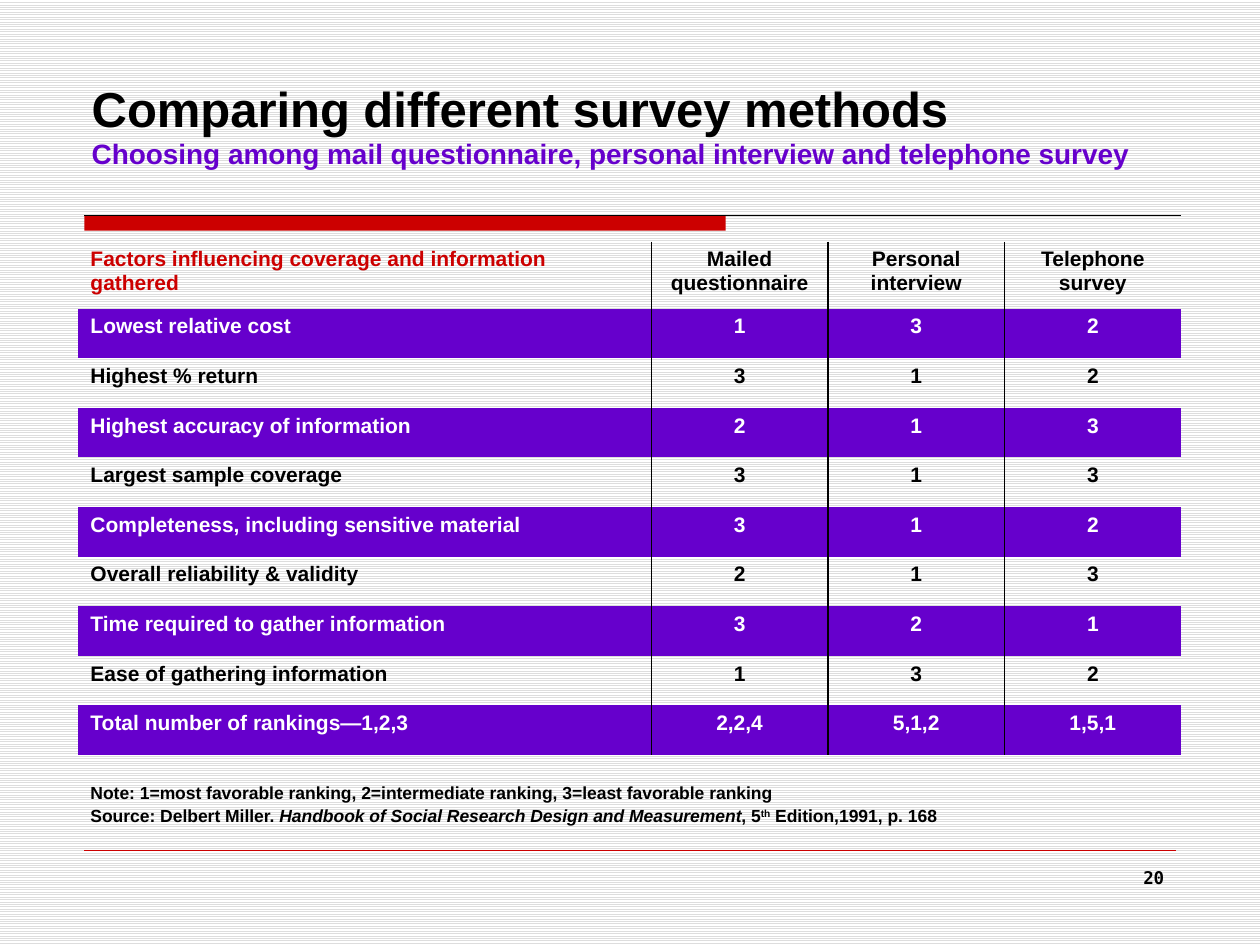
from lxml.etree import SubElement
from pptx import Presentation
from pptx.dml.color import RGBColor
from pptx.enum.dml import MSO_PATTERN
from pptx.enum.shapes import MSO_CONNECTOR, MSO_SHAPE
from pptx.enum.text import MSO_ANCHOR, PP_ALIGN
from pptx.oxml.ns import qn
from pptx.util import Cm, Pt

BLACK = RGBColor(0x00, 0x00, 0x00)
WHITE = RGBColor(0xFF, 0xFF, 0xFF)
GREY = RGBColor(0xDD, 0xDD, 0xDD)
RED = RGBColor(0xCC, 0x00, 0x00)
PURPLE = RGBColor(0x66, 0x00, 0xCC)
NO_GRID_STYLE = "{2D5ABB26-0587-4C30-8999-92F81FD0307C}"

HEADINGS = ["Factors influencing coverage and information gathered",
            "Mailed questionnaire", "Personal interview", "Telephone survey"]
RANKINGS = [
    ["Lowest relative cost", "1", "3", "2"],
    ["Highest % return", "3", "1", "2"],
    ["Highest accuracy of information", "2", "1", "3"],
    ["Largest sample coverage", "3", "1", "3"],
    ["Completeness, including sensitive material", "3", "1", "2"],
    ["Overall reliability & validity", "2", "1", "3"],
    ["Time required to gather information", "3", "2", "1"],
    ["Ease of gathering information", "1", "3", "2"],
    ["Total number of rankings—1,2,3", "2,2,4", "5,1,2", "1,5,1"],
]
NOTE = "Note: 1=most favorable ranking, 2=intermediate ranking, 3=least favorable ranking"
COLUMN_WIDTHS = [11.56, 3.56, 3.56, 3.56]
ROW_HEIGHTS = [1.35] + [1] * len(RANKINGS) + [1.27]


class SlideBuilder:
    font_name = "Arial"

    def __init__(self, slide):
        self.slide = slide

    def background(self):
        fill = self.slide.background.fill
        fill.patterned()
        fill.pattern = MSO_PATTERN.LIGHT_HORIZONTAL
        fill.fore_color.rgb = GREY
        fill.back_color.rgb = WHITE

    def style(self, font, size, color, name=None):
        font.name = name or self.font_name
        font.size = Pt(size)
        font.bold = True
        font.color.rgb = color

    def bar(self, left, top, width, height, color):
        shape = self.slide.shapes.add_shape(
            MSO_SHAPE.RECTANGLE, Cm(left), Cm(top), Cm(width), Cm(height))
        shape.shadow.inherit = False
        shape.fill.solid()
        shape.fill.fore_color.rgb = color
        shape.line.fill.background()

    def rule(self, left, right, top, color, width):
        connector = self.slide.shapes.add_connector(
            MSO_CONNECTOR.STRAIGHT, Cm(left), Cm(top), Cm(right), Cm(top))
        connector.line.color.rgb = color
        connector.line.width = Pt(width)
        SubElement(connector._element.spPr, qn("a:effectLst"))

    def text_box(self, left, top, width, height):
        shape = self.slide.shapes.add_textbox(Cm(left), Cm(top), Cm(width), Cm(height))
        shape.text_frame.word_wrap = True
        return shape.text_frame

    def title(self, heading, subheading):
        frame = self.text_box(1.6, 0.84, 22.23, 3.38)
        frame.vertical_anchor = MSO_ANCHOR.BOTTOM
        frame.margin_bottom = Cm(0.78)
        paragraph = frame.paragraphs[0]
        run = paragraph.add_run()
        run.text = heading
        self.style(run.font, 28, BLACK)
        paragraph.add_line_break()
        run = paragraph.add_run()
        run.text = subheading
        self.style(run.font, 16, PURPLE)

    def page_number(self, number):
        paragraph = self.text_box(18.21, 17.35, 5.51, 1.32).paragraphs[0]
        paragraph.text = number
        paragraph.alignment = PP_ALIGN.RIGHT
        self.style(paragraph.font, 10, BLACK, "DejaVu Sans Mono")

    def border(self, cell, side):
        line = SubElement(cell._tc.get_or_add_tcPr(), qn(f"a:{side}"), w=str(Pt(1)))
        fill = SubElement(line, qn("a:solidFill"))
        SubElement(fill, qn("a:srgbClr"), val=str(BLACK))

    def cell(self, cell, text, color, column, fill_color):
        paragraph = cell.text_frame.paragraphs[0]
        paragraph.text = text
        paragraph.alignment = PP_ALIGN.CENTER if column else PP_ALIGN.LEFT
        self.style(paragraph.font, 12, color)
        if column > 0:
            self.border(cell, "lnL")
        if column < len(COLUMN_WIDTHS) - 1:
            self.border(cell, "lnR")
        if fill_color is None:
            cell.fill.background()
        else:
            cell.fill.solid()
            cell.fill.fore_color.rgb = fill_color

    def note(self, cell):
        cell.margin_top = Cm(0.58)
        cell.fill.background()
        frame = cell.text_frame
        frame.paragraphs[0].text = NOTE
        source = frame.add_paragraph()
        source.space_before = Pt(2)
        for text in ("Source: Delbert Miller. ",
                     "Handbook of Social Research Design and Measurement",
                     ", 5", "th", " Edition,1991, p. 168"):
            run = source.add_run()
            run.text = text
            if text.startswith("Handbook"):
                run.font.italic = True
            if text == "th":
                run._r.get_or_add_rPr().set("baseline", "30000")
        for paragraph in frame.paragraphs:
            self.style(paragraph.font, 10, BLACK)

    def table(self, left, top):
        shape = self.slide.shapes.add_table(
            len(ROW_HEIGHTS), len(COLUMN_WIDTHS), Cm(left), Cm(top),
            Cm(sum(COLUMN_WIDTHS)), Cm(sum(ROW_HEIGHTS)))
        table = shape.table
        table.horz_banding = False
        table.first_row = False
        table._tbl.tblPr.find(qn("a:tableStyleId")).text = NO_GRID_STYLE
        for column, width in zip(table.columns, COLUMN_WIDTHS):
            column.width = Cm(width)
        for row, height in zip(table.rows, ROW_HEIGHTS):
            row.height = Cm(height)
        for row, texts in enumerate([HEADINGS] + RANKINGS):
            banded = row % 2 == 1
            for column, text in enumerate(texts):
                color = WHITE if banded else BLACK
                if row == column == 0:
                    color = RED
                self.cell(table.cell(row, column), text, color, column,
                          PURPLE if banded else None)
        last = len(ROW_HEIGHTS) - 1
        note_cell = table.cell(last, 0)
        note_cell.merge(table.cell(last, len(COLUMN_WIDTHS) - 1))
        self.note(note_cell)


def main():
    presentation = Presentation()
    presentation.slide_width = Cm(25.4)
    presentation.slide_height = Cm(19.05)
    builder = SlideBuilder(presentation.slides.add_slide(presentation.slide_layouts[6]))
    builder.background()
    builder.bar(1.7, 4.34, 12.93, 0.31, RED)
    builder.rule(1.7, 23.8, 4.34, BLACK, 0.75)
    builder.rule(1.7, 23.7, 17.15, RED, 0.25)
    builder.page_number("20")
    builder.title("Comparing different survey methods",
                  "Choosing among mail questionnaire, personal interview and telephone survey")
    builder.table(1.57, 4.87)
    presentation.save("out.pptx")


if __name__ == "__main__":
    main()
